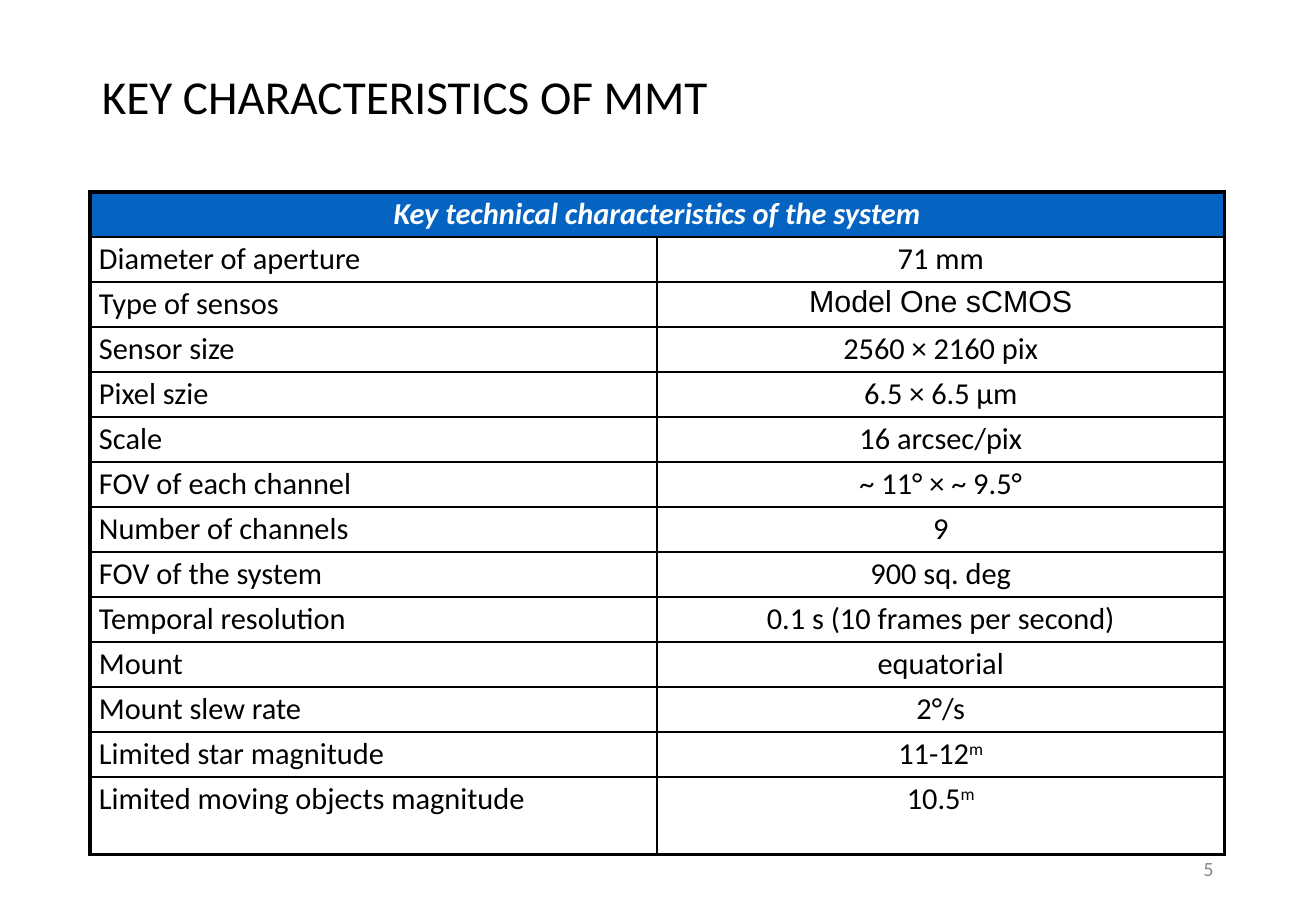
from dataclasses import dataclass

from lxml.etree import SubElement
from pptx import Presentation
from pptx.dml.color import RGBColor as RGB
from pptx.enum.text import MSO_ANCHOR as Anchor, PP_ALIGN as Align
from pptx.oxml.ns import qn
from pptx.util import Pt


@dataclass(frozen=True)
class Theme:
    """Colours, fonts and sizes of the slide."""
    ink: str = "000000"
    paper: str = "FFFFFF"
    blue: str = "0563C1"
    grey: str = "898989"
    font: str = "Calibri"
    alt: str = "Arial"
    title: float = 28
    body: float = 18
    note: float = 12
    thin: float = 1
    thick: float = 2.25


THEME = Theme()
LEFT, WIDTH = 53.28, 672.48
TOP, ROW, LAST = 113.76, 26.64, 46.08
HEAD = "Key technical characteristics of the system"
SENSOR = "Model One sCMOS"
FACTS = [
    ("Diameter of aperture", "71 mm"),
    ("Type of sensos", SENSOR),
    ("Sensor size", "2560 × 2160 pix"),
    ("Pixel szie", "6.5 × 6.5 μm"),
    ("Scale", "16 arcsec/pix"),
    ("FOV of each channel", "~ 11° × ~ 9.5°"),
    ("Number of channels", "9"),
    ("FOV of the system", "900 sq. deg"),
    ("Temporal resolution", "0.1 s (10 frames per second)"),
    ("Mount", "equatorial"),
    ("Mount slew rate", "2°/s"),
    ("Limited star magnitude", "11-12^m"),
    ("Limited moving objects magnitude", "10.5^m"),
]


def write(frame, text, size=THEME.body, color=THEME.ink, font=THEME.font,
          bold=False, italic=False, align=Align.LEFT, line=0.9, before=0):
    """Write one paragraph; whatever follows a caret is superscript."""
    para = frame.paragraphs[0]
    para.alignment, para.line_spacing = align, line
    para.space_before = Pt(before)
    for level, part in enumerate(text.split("^")):
        run = para.add_run()
        run.text = part
        face = run.font
        face.name, face.size = font, Pt(size)
        face.bold, face.italic = bold, italic
        face.color.rgb = RGB.from_string(color)
        if level:
            run._r.get_or_add_rPr().set("baseline", "30000")


def label(slide, text, left, top, width, height, **style):
    """Add a vertically centred text box."""
    frame = slide.shapes.add_textbox(
        Pt(left), Pt(top), Pt(width), Pt(height)).text_frame
    frame.word_wrap = True
    frame.vertical_anchor = Anchor.MIDDLE
    write(frame, text, **style)


def edge(cell, heavy):
    """Draw the four cell borders, thick on the heavy sides."""
    props = cell._tc.get_or_add_tcPr()
    for spot, side in enumerate("LRTB"):
        width = THEME.thick if side in heavy else THEME.thin
        line = SubElement(props, qn(f"a:ln{side}"), w=str(int(Pt(width))))
        fill = SubElement(line, qn("a:solidFill"))
        SubElement(fill, qn("a:srgbClr"), val=THEME.ink)
        props.remove(line)
        props.insert(spot, line)


def fill_cell(cell, text, heavy, fill=None, **style):
    """Set the text, margins, fill and borders of one cell."""
    cell.margin_left = cell.margin_right = Pt(5.4)
    cell.margin_top = cell.margin_bottom = Pt(3.6)
    if fill:
        cell.fill.solid()
        cell.fill.fore_color.rgb = RGB.from_string(fill)
    else:
        cell.fill.background()
    if text:
        write(cell.text_frame, text, before=10, **style)
    edge(cell, heavy)


def add_grid(slide):
    """Add the table of characteristics."""
    count = len(FACTS)
    grid = slide.shapes.add_table(
        count + 1, 2, Pt(LEFT), Pt(TOP), Pt(WIDTH),
        Pt(count * ROW + LAST)).table
    grid.horz_banding = grid.first_row = False
    for col in grid.columns:
        col.width = Pt(WIDTH / 2)
    for num, row in enumerate(grid.rows):
        row.height = Pt(LAST if num == count else ROW)
    grid.cell(0, 0).merge(grid.cell(0, 1))
    for col, text in enumerate((HEAD, "")):
        fill_cell(grid.cell(0, col), text, "LRT", fill=THEME.blue,
                  color=THEME.paper, bold=True, italic=True,
                  align=Align.CENTER)
    for num, (name, value) in enumerate(FACTS, 1):
        base = "B" if num == count else ""
        fill_cell(grid.cell(num, 0), name, "L" + base)
        fill_cell(grid.cell(num, 1), value, "R" + base, align=Align.CENTER,
                  font=THEME.alt if value == SENSOR else THEME.font)


def main():
    """Build and save the slide."""
    deck = Presentation()
    deck.slide_width, deck.slide_height = Pt(780), Pt(540)
    slide = deck.slides.add_slide(deck.slide_layouts[6])
    label(slide, "KEY CHARACTERISTICS OF MMT", LEFT, 6.48, WIDTH, 104.4,
          size=THEME.title)
    add_grid(slide)
    label(slide, "5", 550.8, 500.4, 175.68, 28.8, size=THEME.note,
          color=THEME.grey, align=Align.RIGHT, line=1.0)
    deck.save("out.pptx")


if __name__ == "__main__":
    main()
